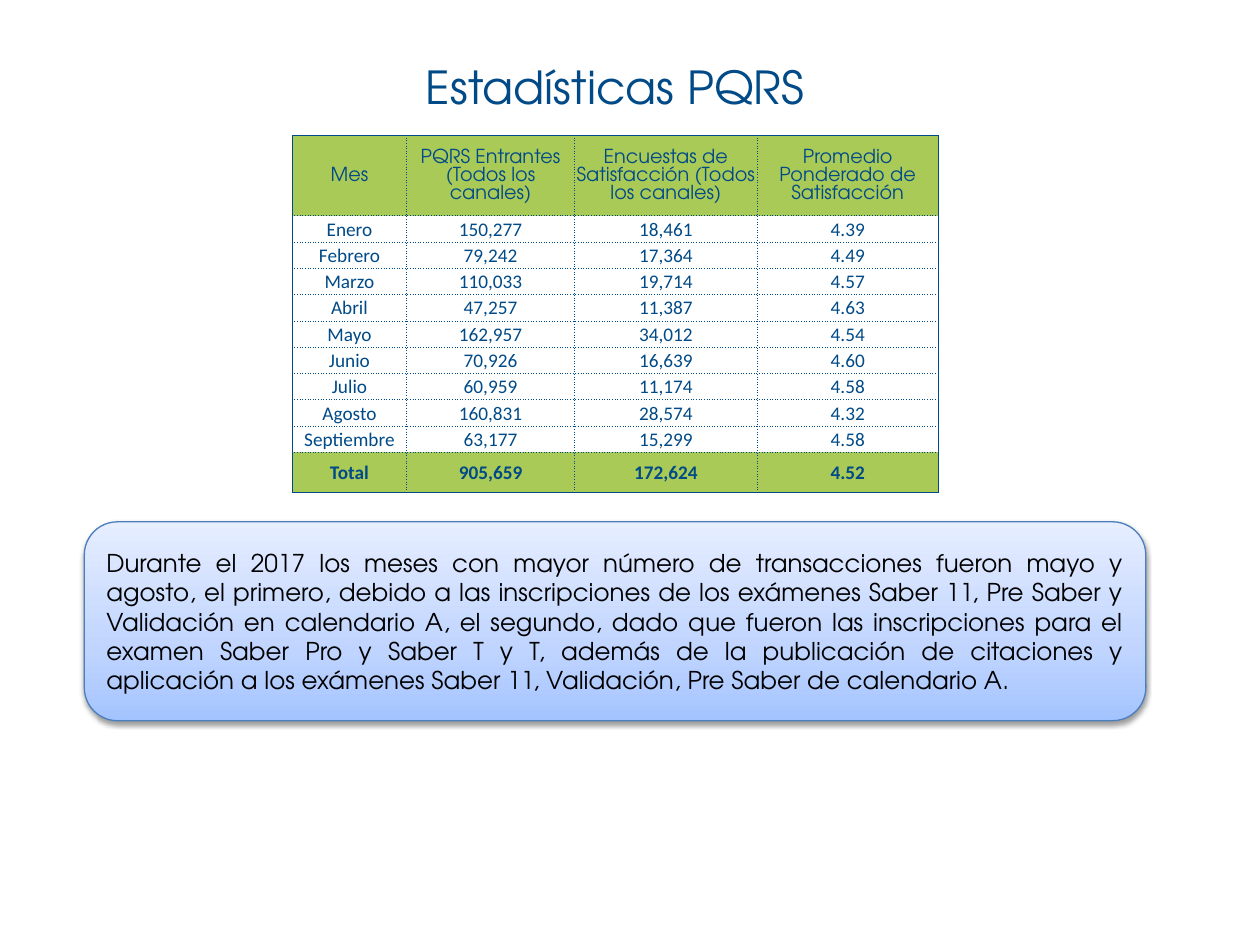
from copy import deepcopy

from lxml.etree import SubElement
from pptx import Presentation
from pptx.dml.color import RGBColor
from pptx.enum.shapes import MSO_SHAPE as Shape
from pptx.enum.text import MSO_ANCHOR as Anchor, PP_ALIGN as Align
from pptx.oxml.ns import qn
from pptx.util import Cm, Pt

COLORS = {
    "navy": "004A87", "green": "AACA57", "black": "000000", "outline": "4B7EBC",
    "deep": "A4C4FF", "mid": "BFD4FF", "pale": "E6EEFF",
}
DISPLAY_FONT = "TeX Gyre Adventor"
BODY_FONT = "Calibri"

COLUMN_WIDTHS = [2.31, 3.38, 3.69, 3.64]
HEADER_HEIGHT, MONTH_HEIGHT, TOTAL_HEIGHT = 1.62, 0.53, 0.81
ROWS = [
    ["Mes", "PQRS Entrantes (Todos los canales)",
     "Encuestas de Satisfacción (Todos los canales)", "Promedio Ponderado de Satisfacción"],
    ["Enero", "150,277", "18,461", "4.39"],
    ["Febrero", "79,242", "17,364", "4.49"],
    ["Marzo", "110,033", "19,714", "4.57"],
    ["Abril", "47,257", "11,387", "4.63"],
    ["Mayo", "162,957", "34,012", "4.54"],
    ["Junio", "70,926", "16,639", "4.60"],
    ["Julio", "60,959", "11,174", "4.58"],
    ["Agosto", "160,831", "28,574", "4.32"],
    ["Septiembre", "63,177", "15,299", "4.58"],
    ["Total", "905,659", "172,624", "4.52"],
]
COMMENT = (
    "Durante el 2017 los meses con mayor número de transacciones fueron mayo y agosto, "
    "el primero, debido a las inscripciones de los exámenes Saber 11, Pre Saber y "
    "Validación en calendario A, el segundo, dado que fueron las inscripciones para el "
    "examen Saber Pro y Saber T y T, además de la publicación de citaciones y aplicación "
    "a los exámenes Saber 11, Validación, Pre Saber de calendario A."
)


def rgb(name):
    return RGBColor.from_string(COLORS[name])


def write(text_frame, text, size, color, font=DISPLAY_FONT, align=Align.CENTER, bold=False):
    paragraph = text_frame.paragraphs[0]
    paragraph.alignment = align
    run = paragraph.add_run()
    run.text = text
    run.font.name = font
    run.font.size = Pt(size)
    run.font.bold = bold
    run.font.color.rgb = rgb(color)


def add_title(slide, text):
    title = slide.shapes.title
    title.left, title.top, title.width, title.height = Cm(0.97), Cm(0.74), Cm(22.86), Cm(2)
    title.text_frame.vertical_anchor = Anchor.MIDDLE
    write(title.text_frame, text, 26, "navy")


def set_borders(cell, solid_sides):
    properties = cell._tc.get_or_add_tcPr()
    for side in "LRTB":
        line = SubElement(properties, qn(f"a:ln{side}"), w=str(Pt(0.5)))
        fill = SubElement(line, qn("a:solidFill"))
        SubElement(fill, qn("a:srgbClr"), val=COLORS["navy"])
        SubElement(line, qn("a:prstDash"), val="solid" if side in solid_sides else "sysDot")


def format_cell(cell, text, is_header, is_total, solid_sides):
    cell.vertical_anchor = Anchor.MIDDLE
    cell.margin_left = cell.margin_right = cell.margin_top = Cm(0.02)
    cell.margin_bottom = 0
    font = DISPLAY_FONT if is_header else BODY_FONT
    write(cell.text_frame, text, 11, "navy", font, bold=is_total)
    set_borders(cell, solid_sides)
    if is_header or is_total:
        cell.fill.solid()
        cell.fill.fore_color.rgb = rgb("green")
    else:
        cell.fill.background()


def add_statistics_table(slide):
    month_count = len(ROWS) - 2
    heights = [HEADER_HEIGHT] + [MONTH_HEIGHT] * month_count + [TOTAL_HEIGHT]
    last_row, last_column = len(ROWS) - 1, len(COLUMN_WIDTHS) - 1
    table = slide.shapes.add_table(
        len(ROWS), len(COLUMN_WIDTHS), Cm(5.89), Cm(2.73),
        Cm(sum(COLUMN_WIDTHS)), Cm(sum(heights))).table
    table.horz_banding = False
    for column, width in zip(table.columns, COLUMN_WIDTHS):
        column.width = Cm(width)
    for r, (values, height) in enumerate(zip(ROWS, heights)):
        table.rows[r].height = Cm(height)
        for c, text in enumerate(values):
            # Solid outer frame, dotted inner grid
            edges = {"L": c == 0, "R": c == last_column, "T": r == 0, "B": r == last_row}
            solid_sides = [side for side, outer in edges.items() if outer]
            format_cell(table.cell(r, c), text, r == 0, r == last_row, solid_sides)


def fill_gradient(shape, stops, angle):
    shape.fill.gradient()
    shape.fill.gradient_angle = angle
    stop_list = shape._element.spPr.find(qn("a:gradFill")).find(qn("a:gsLst"))
    stop_list.append(deepcopy(stop_list[0]))
    for stop, (position, color) in zip(shape.fill.gradient_stops, stops):
        stop.position = position
        stop.color.rgb = rgb(color)


def add_soft_shadow(shape):
    shape.shadow.inherit = False
    effects = shape._element.spPr.find(qn("a:effectLst"))
    shadow = SubElement(effects, qn("a:outerShdw"), blurRad=str(Pt(3.1)), dist=str(Pt(1.6)),
                        dir="5400000", rotWithShape="0")
    color = SubElement(shadow, qn("a:srgbClr"), val=COLORS["black"])
    SubElement(color, qn("a:alpha"), val="38000")


def add_comment_box(slide, text):
    box = slide.shapes.add_shape(
        Shape.ROUNDED_RECTANGLE, Cm(1.7), Cm(10.52), Cm(21.4), Cm(4.01))
    fill_gradient(box, [(0, "deep"), (0.35, "mid"), (1, "pale")], 90)
    box.line.color.rgb = rgb("outline")
    box.line.width = Pt(0.75)
    add_soft_shadow(box)
    box.text_frame.word_wrap = True
    box.text_frame.vertical_anchor = Anchor.MIDDLE
    write(box.text_frame, text, 14, "black", align=Align.JUSTIFY)


def main():
    presentation = Presentation()
    presentation.slide_width, presentation.slide_height = Cm(25.4), Cm(19.05)
    slide = presentation.slides.add_slide(presentation.slide_layouts[5])
    add_title(slide, "Estadísticas PQRS")
    add_statistics_table(slide)
    add_comment_box(slide, COMMENT)
    presentation.save("out.pptx")


if __name__ == "__main__":
    main()
